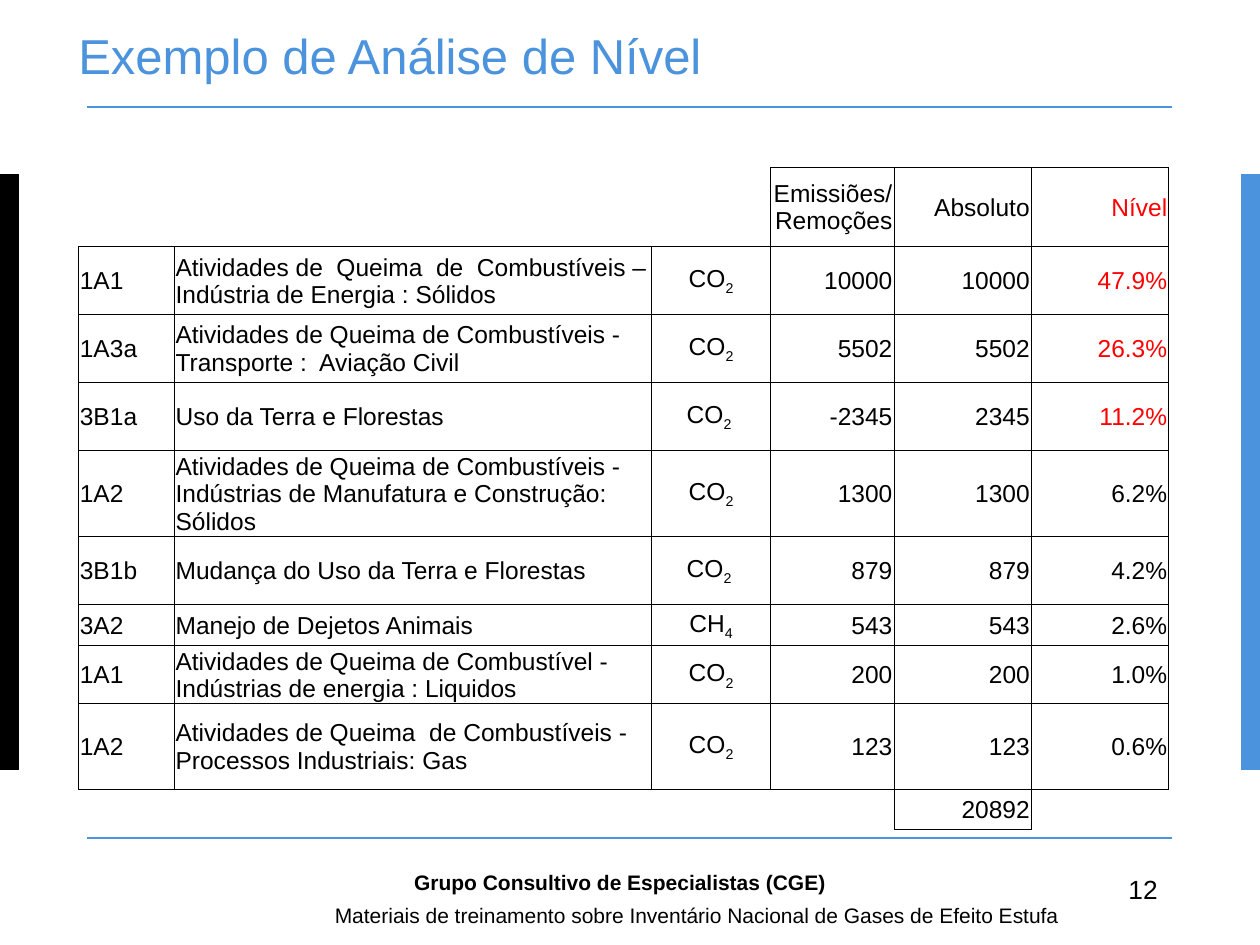
"""Build the level analysis example slide with its table of emission categories."""
from lxml.etree import SubElement
from pptx import Presentation
from pptx.dml.color import RGBColor as RGB
from pptx.enum.shapes import MSO_CONNECTOR as Connector, MSO_SHAPE as Shape
from pptx.enum.text import MSO_ANCHOR as Anchor, MSO_AUTO_SIZE as AutoSize, PP_ALIGN as Align
from pptx.oxml.ns import qn
from pptx.util import Cm, Pt

TITLE = "Exemplo de Análise de Nível"
HEADER = ("", "", "", "Emissiões/ Remoções", "Absoluto", "Nível")
CATEGORIES = [
    ("1A1", "Atividades de  Queima  de  Combustíveis – Indústria de Energia : Sólidos", ("CO", "2"), 10000),
    ("1A3a", "Atividades de Queima de Combustíveis - Transporte :  Aviação Civil", ("CO", "2"), 5502),
    ("3B1a", "Uso da Terra e Florestas", ("CO", "2 "), -2345),
    ("1A2", "Atividades de Queima de Combustíveis - Indústrias de Manufatura e Construção:  Sólidos", ("CO", "2"), 1300),
    ("3B1b", "Mudança do Uso da Terra e Florestas", ("CO", "2 "), 879),
    ("3A2", "Manejo de Dejetos Animais", ("CH", "4"), 543),
    ("1A1", "Atividades de Queima de Combustível - Indústrias de energia : Liquidos", ("CO", "2"), 200),
    ("1A2", "Atividades de Queima  de Combustíveis -   Processos Industriais: Gas", ("CO", "2"), 123),
]
FOOTERS = [
    ("12", (22.5, 17.48, 1.2, 0.89), {"size": Pt(15)}),
    ("Materiais de treinamento sobre Inventário Nacional de Gases de Efeito Estufa",
     (6.5, 18.06, 15.34, 0.3), {"size": Pt(12)}),
    ("Grupo Consultivo de Especialistas (CGE)", (8.1, 17.4, 9.6, 0.69), {"size": Pt(12), "bold": True}),
]

THEME = {
    "font": "Arial", "title": Pt(28), "cell": Pt(14), "rule": Pt(1), "border": Pt(0.5),
    "ink": RGB(0, 0, 0), "accent": RGB(0x4B, 0x93, 0xDC), "key": RGB(0xFF, 0, 0),
}
SLIDE_SIZE = (25.4, 19.05)
BARS = [(0, "ink"), (25.02, "accent")]
RULES_Y = (2.16, 16.89)
COLUMNS = (1.93, 9.63, 2.39, 2.49, 2.77, 2.77)
ROWS = (1.6, 1.37, 1.37, 1.37, 1.73, 1.37, 0.84, 1.16, 1.73, 0.81)
ALIGNS = (Align.LEFT, Align.LEFT, Align.CENTER) + (Align.RIGHT,) * 3
KEY_ROWS, LEVEL = 4, 5
CELL_FORMAT = {"margin_left": Cm(0.03), "margin_right": Cm(0.03), "margin_top": Cm(0.03),
               "margin_bottom": 0, "vertical_anchor": Anchor.MIDDLE}
EDGES = {"a:lnL": (0, -1), "a:lnR": (0, 1), "a:lnT": (-1, 0), "a:lnB": (1, 0)}


def apply(target, values):
    for name, value in values.items():
        setattr(target, name, value)


def set_font(font, color="ink", **values):
    apply(font, {"name": THEME["font"], **values})
    font.color.rgb = THEME[color]


def table_rows():
    total = sum(abs(emission) for *_, emission in CATEGORIES)
    body = [(code, activity, gas, str(emission), str(abs(emission)), f"{abs(emission) / total:.1%}")
            for code, activity, gas, emission in CATEGORIES]
    return [HEADER, *body, ("", "", "", "", str(total), "")]


def draw_edges(cell, row, column, rows):
    def filled(r, c):
        return 0 <= r < len(ROWS) and 0 <= c < len(COLUMNS) and bool(rows[r][c])

    properties = cell._tc.get_or_add_tcPr()
    for tag, (down, right) in EDGES.items():
        edge = SubElement(properties, qn(tag), w=str(THEME["border"]))
        if filled(row, column) or filled(row + down, column + right):
            fill = SubElement(edge, qn("a:solidFill"))
            SubElement(fill, qn("a:srgbClr"), val=str(THEME["ink"]))
        else:
            SubElement(edge, qn("a:noFill"))


def fill_cell(cell, content, column, color):
    paragraph = cell.text_frame.paragraphs[0]
    paragraph.alignment = ALIGNS[column]
    parts = content if isinstance(content, tuple) else (content,)
    for position, part in enumerate(parts):
        run = paragraph.add_run()
        run.text = part
        set_font(run.font, color, size=THEME["cell"])
        if position:
            run.font._element.set("baseline", "-25000")


def add_level_table(slide):
    rows = table_rows()
    frame = slide.shapes.add_table(len(ROWS), len(COLUMNS), Cm(1.58), Cm(3.37),
                                   Cm(sum(COLUMNS)), Cm(sum(ROWS)))
    table = frame.table
    apply(table, {"first_row": False, "horz_banding": False})
    for column, width in zip(table.columns, COLUMNS):
        column.width = Cm(width)
    for r, (row, height) in enumerate(zip(table.rows, ROWS)):
        row.height = Cm(height)
        for c, content in enumerate(rows[r]):
            cell = table.cell(r, c)
            apply(cell, CELL_FORMAT)
            draw_edges(cell, r, c, rows)
            cell.fill.background()
            if content:
                fill_cell(cell, content, c, "key" if c == LEVEL and r < KEY_ROWS else "ink")


def add_frame(slide):
    for left, color in BARS:
        bar = slide.shapes.add_shape(Shape.RECTANGLE, Cm(left), Cm(3.51), Cm(0.38), Cm(12.01))
        bar.shadow.inherit = False
        bar.fill.solid()
        bar.fill.fore_color.rgb = THEME[color]
        bar.line.fill.background()
    for y in RULES_Y:
        rule = slide.shapes.add_connector(Connector.STRAIGHT, Cm(1.75), Cm(y), Cm(23.62), Cm(y))
        rule.line.color.rgb = THEME["accent"]
        rule.line.width = THEME["rule"]
        SubElement(rule._element.spPr, qn("a:effectLst"))


def add_title(slide):
    title = slide.shapes.title
    apply(title, {"left": Cm(1.58), "top": Cm(0.74), "width": Cm(22), "height": Cm(1.4)})
    title.text = TITLE
    apply(title.text_frame, {"margin_left": 0, "margin_right": 0, "margin_top": 0, "margin_bottom": 0,
                             "vertical_anchor": Anchor.MIDDLE, "auto_size": AutoSize.NONE})
    paragraph = title.text_frame.paragraphs[0]
    apply(paragraph, {"alignment": Align.LEFT, "line_spacing": Pt(15)})
    set_font(paragraph.runs[0].font, "accent", size=THEME["title"])


def add_footers(slide):
    for text, box, values in FOOTERS:
        footer = slide.shapes.add_textbox(*map(Cm, box))
        footer.text_frame.word_wrap = True
        footer.text_frame.text = text
        set_font(footer.text_frame.paragraphs[0].runs[0].font, **values)


def main():
    deck = Presentation()
    deck.slide_width, deck.slide_height = map(Cm, SLIDE_SIZE)
    slide = deck.slides.add_slide(deck.slide_layouts.get_by_name("Title Only"))
    for build in (add_frame, add_level_table, add_title, add_footers):
        build(slide)
    deck.save("out.pptx")


if __name__ == "__main__":
    main()
